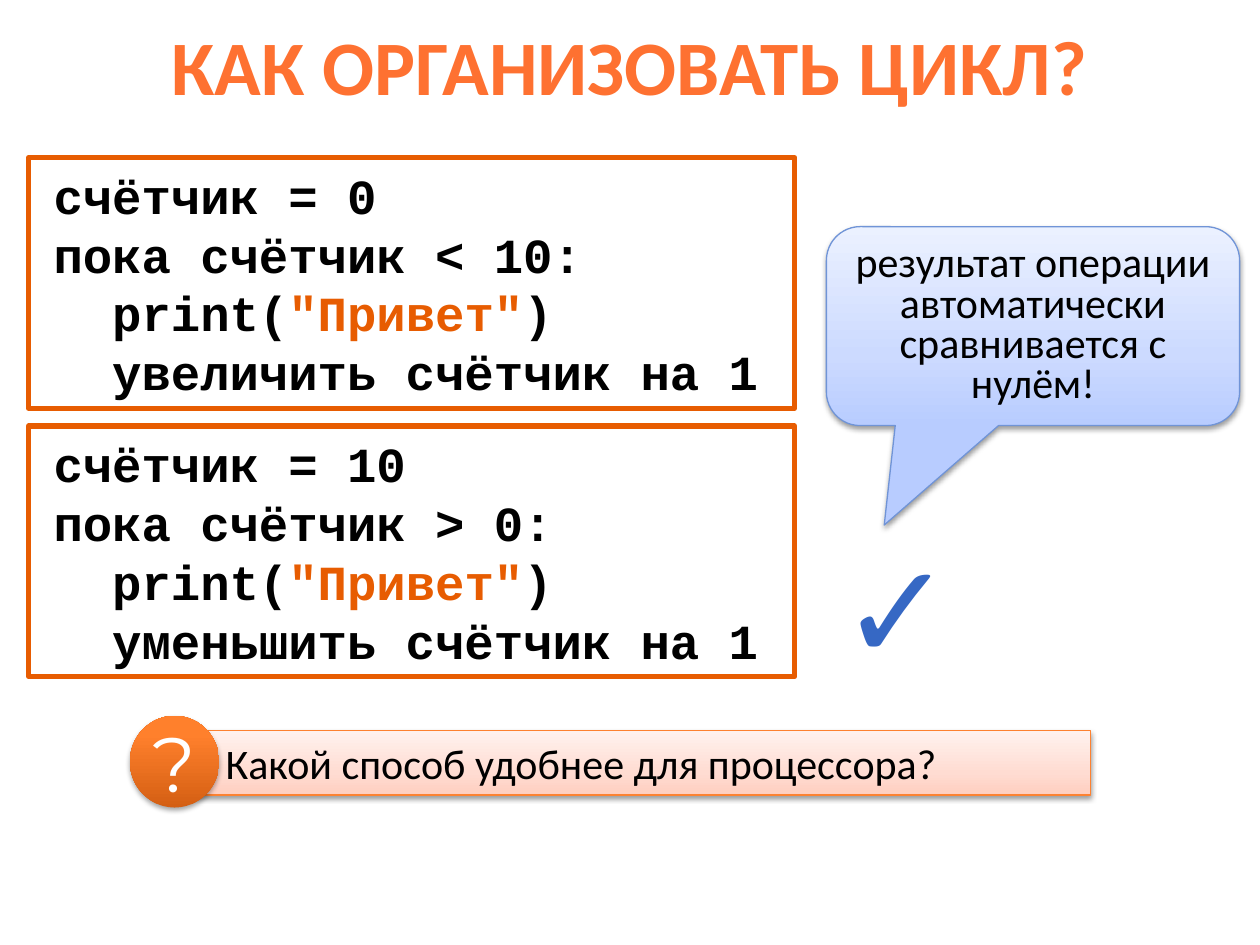
from lxml.etree import SubElement
from pptx import Presentation
from pptx.dml.color import RGBColor
from pptx.enum.shapes import MSO_SHAPE
from pptx.enum.text import MSO_ANCHOR, PP_ALIGN
from pptx.oxml.ns import qn
from pptx.util import Cm, Pt

TITLE = "КАК ОРГАНИЗОВАТЬ ЦИКЛ?"
INK, ORANGE, BLUE, WHITE = "000000", "E75C01", "3668C4", "FFFFFF"
PROGRAMS = [
    ("счётчик = 0", "пока счётчик < 10:", "увеличить счётчик на 1"),
    ("счётчик = 10", "пока счётчик > 0:", "уменьшить счётчик на 1"),
]
QUESTION = "Какой способ удобнее для процессора?"
REMARK = "результат операции автоматически сравнивается с нулём!"
PEACH = [(0, "FFCEBF"), (35, "FFDCD2"), (100, "FFF2EE")]
AMBER = [(0, "D45F13"), (80, "FF802C"), (100, "FF812E")]
SKY = [(0, "B8CCFF"), (35, "CCDAFF"), (100, "EBF1FF")]


def rgb(value):
    """Turn a hex string into a colour."""
    return RGBColor.from_string(value)


def add_run(p, text, size, color, font="Calibri", bold=False):
    """Append one formatted run to a paragraph."""
    r = p.add_run()
    r.text = text
    r.font.size, r.font.name, r.font.bold = Pt(size), font, bold
    r.font.color.rgb = rgb(color)


def add_box(shapes, kind, box, line=None, width=0.75):
    """Add an unfilled shape with an optional outline and no shadow."""
    sp = shapes.add_shape(kind, *map(Cm, box))
    sp.shadow.inherit = False
    sp.fill.background()
    if line:
        sp.line.color.rgb = rgb(line)
        sp.line.width = Pt(width)
    else:
        sp.line.fill.background()
    sp.text_frame.word_wrap = True
    sp.text_frame.vertical_anchor = MSO_ANCHOR.MIDDLE
    return sp


def add_glossy(shapes, kind, box, stops, line=None, alpha=38):
    """Add a shape with an upward gradient and a soft shadow below."""
    sp = add_box(shapes, kind, box, line)
    sp.fill.gradient()
    sp.fill.gradient_angle = 90
    props = sp._element.spPr
    stop_list = props.find(qn("a:gradFill")).find(qn("a:gsLst"))
    for old in list(stop_list):
        stop_list.remove(old)
    for position, color in stops:
        stop = SubElement(stop_list, qn("a:gs"), pos=str(position * 1000))
        SubElement(stop, qn("a:srgbClr"), val=color)
    shadow = SubElement(props.find(qn("a:effectLst")), qn("a:outerShdw"),
                        blurRad=str(Pt(3.1)), dist=str(Pt(1.6)),
                        dir="5400000", rotWithShape="0")
    color = SubElement(shadow, qn("a:srgbClr"), val=INK)
    SubElement(color, qn("a:alpha"), val=str(alpha * 1000))
    return sp


def add_program(shapes, top, program):
    """Add a framed listing with the string literal highlighted."""
    start, condition, step = program
    lines = [
        [(start, INK)],
        [(condition, INK)],
        [("  print(", INK), ('"Привет"', ORANGE), (")", INK)],
        [("  " + step, INK)],
    ]
    sp = add_box(shapes, MSO_SHAPE.RECTANGLE, (0.58, top, 15.44, 5.05), ORANGE, 3)
    tf = sp.text_frame
    for i, line in enumerate(lines):
        p = tf.add_paragraph() if i else tf.paragraphs[0]
        p.alignment = PP_ALIGN.LEFT
        p._p.get_or_add_pPr().set("marL", str(Cm(0.25)))
        for text, color in line:
            add_run(p, text, 28, color, "Courier New", True)


def add_question(shapes):
    """Add the question banner with its round badge as a group."""
    group = shapes.add_group_shape().shapes
    banner = add_glossy(group, MSO_SHAPE.RECTANGLE, (3.91, 14.73, 18.08, 1.3),
                        PEACH, "FD8231")
    banner.text_frame.margin_left = Cm(0.64)
    p = banner.text_frame.paragraphs[0]
    p.alignment = PP_ALIGN.LEFT
    add_run(p, QUESTION, 24, INK)
    badge = add_glossy(group, MSO_SHAPE.OVAL, (2.62, 14.43, 1.8, 1.85), AMBER, alpha=35)
    badge.text_frame.word_wrap = False
    p = badge.text_frame.paragraphs[0]
    p.alignment = PP_ALIGN.CENTER
    add_run(p, "?", 44, WHITE, "Montserrat")


def add_remark(shapes):
    """Add the callout and the check mark it points to."""
    check = shapes.add_textbox(Cm(16.87), Cm(10.11), Cm(2.97), Cm(4.01))
    check.text_frame.word_wrap = False
    add_run(check.text_frame.paragraphs[0], "✓", 88, BLUE, "Courier New", True)
    callout = add_glossy(shapes, MSO_SHAPE.ROUNDED_RECTANGULAR_CALLOUT,
                         (16.66, 4.57, 8.33, 4.01), SKY, "7094D7")
    for i, value in enumerate((-0.36, 1, 0.17)):
        callout.adjustments[i] = value
    p = callout.text_frame.paragraphs[0]
    p.alignment, p.line_spacing = PP_ALIGN.CENTER, 0.8
    add_run(p, REMARK, 24, INK)


def main():
    """Build the slide and save it."""
    prs = Presentation()
    prs.slide_width, prs.slide_height = Cm(25.4), Cm(19.05)
    s = prs.slides.add_slide(prs.slide_layouts[5])
    title = s.shapes.title
    title.left, title.top, title.width, title.height = map(Cm, (0, 0.23, 25.4, 2.16))
    title.text_frame.vertical_anchor = MSO_ANCHOR.MIDDLE
    p = title.text_frame.paragraphs[0]
    p.alignment = PP_ALIGN.CENTER
    add_run(p, TITLE, 44, "FE7131", bold=True)
    for i, program in enumerate(PROGRAMS):
        add_program(s.shapes, 3.18 + i * 5.41, program)
    add_question(s.shapes)
    add_remark(s.shapes)
    prs.save("out.pptx")


if __name__ == "__main__":
    main()
